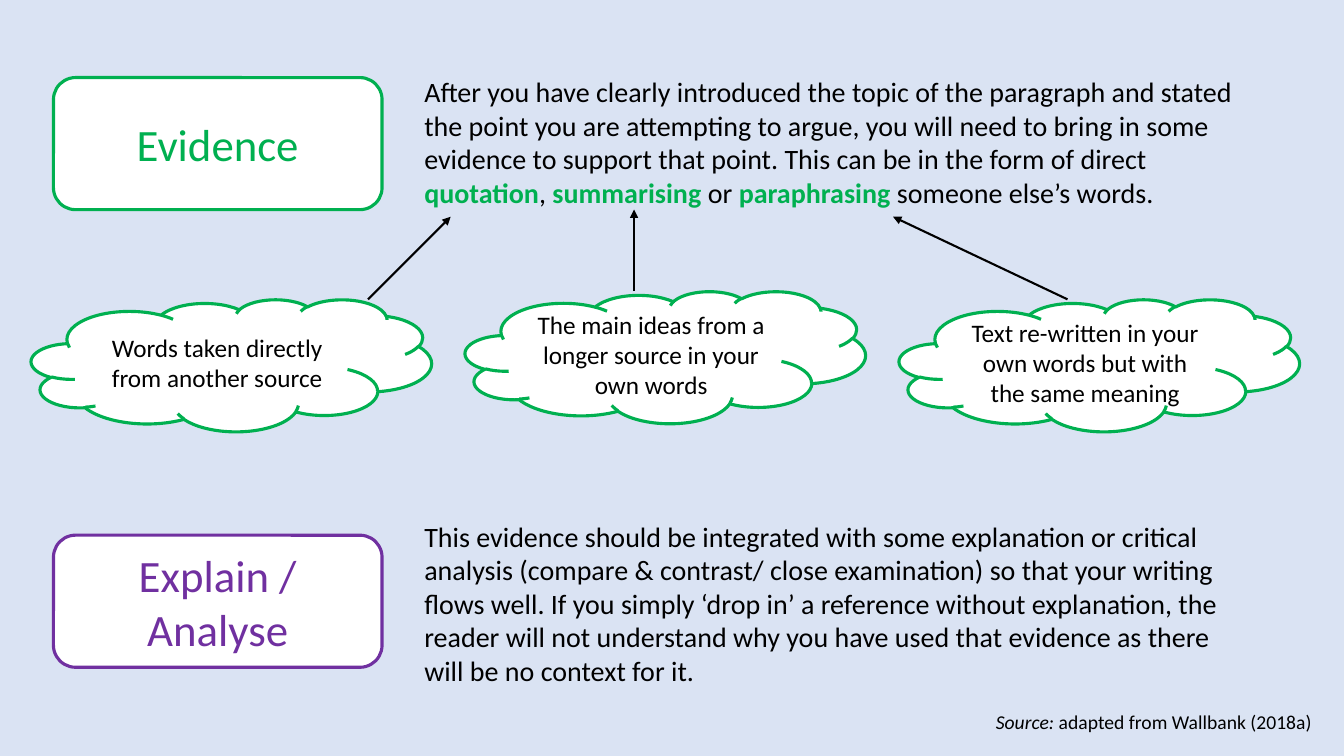
from dataclasses import dataclass

from lxml.etree import SubElement
from pptx import Presentation
from pptx.dml.color import RGBColor
from pptx.enum.shapes import MSO_CONNECTOR, MSO_SHAPE
from pptx.enum.text import MSO_ANCHOR, MSO_AUTO_SIZE, PP_ALIGN
from pptx.oxml.ns import qn
from pptx.slide import Slide
from pptx.text.text import TextFrame
from pptx.util import Inches, Pt

SLIDE_WIDTH = Inches(13.333)
SLIDE_HEIGHT = Inches(7.5)


@dataclass(frozen=True)
class Theme:
    """Colours, font, type sizes and line widths in points."""

    background: RGBColor = RGBColor(0xDA, 0xE3, 0xF3)
    panel: RGBColor = RGBColor(0xFF, 0xFF, 0xFF)
    ink: RGBColor = RGBColor(0x00, 0x00, 0x00)
    evidence: RGBColor = RGBColor(0x00, 0xB0, 0x50)
    explain: RGBColor = RGBColor(0x70, 0x30, 0xA0)
    font: str = "Calibri"
    heading_size: float = 32
    body_size: float = 20
    cloud_size: float = 18
    source_size: float = 14
    outline: float = 2.25
    arrow: float = 1.5


THEME = Theme()


@dataclass(frozen=True)
class Area:
    """A rectangle in percentages of the slide's width and height."""

    left: float
    top: float
    width: float
    height: float

    def lengths(self) -> tuple[int, int, int, int]:
        """Return left, top, width and height as slide lengths."""
        return across(self.left), down(self.top), across(self.width), down(self.height)


@dataclass(frozen=True)
class Words:
    """A run of text with its formatting."""

    text: str
    size: float = THEME.body_size
    color: RGBColor = THEME.ink
    bold: bool = False
    italic: bool = False


@dataclass(frozen=True)
class Panel:
    """An outlined shape holding centred words."""

    preset: MSO_SHAPE
    area: Area
    outline: RGBColor
    words: Words


@dataclass(frozen=True)
class Passage:
    """A left-aligned block of text."""

    area: Area
    runs: tuple[Words, ...]


@dataclass(frozen=True)
class Technique:
    """A cloud's words and top, and its arrow's ends."""

    text: str
    top: float
    arrow_start: float
    arrow_end: float
    arrow_tip: float


def across(percent: float) -> int:
    """Turn a percentage of the slide's width into a length."""
    return round(SLIDE_WIDTH * percent / 100)


def down(percent: float) -> int:
    """Turn a percentage of the slide's height into a length."""
    return round(SLIDE_HEIGHT * percent / 100)


def keyword(text: str) -> Words:
    """Return a highlighted term."""
    return Words(text, color=THEME.evidence, bold=True)


def heading(text: str, top: float, color: RGBColor) -> Panel:
    """Return a rounded section heading."""
    area = Area(HEADING_LEFT, top, HEADING_WIDTH, PANEL_HEIGHT)
    words = Words(text, THEME.heading_size, color)
    return Panel(MSO_SHAPE.ROUNDED_RECTANGLE, area, color, words)


def write(frame: TextFrame, runs: tuple[Words, ...], alignment: PP_ALIGN) -> None:
    """Fill a text frame with one paragraph of runs."""
    frame.word_wrap = True
    paragraph = frame.paragraphs[0]
    paragraph.alignment = alignment
    for words in runs:
        run = paragraph.add_run()
        run.text = words.text
        run.font.name = THEME.font
        run.font.size = Pt(words.size)
        run.font.color.rgb = words.color
        run.font.bold = words.bold
        run.font.italic = words.italic


def draw_panel(slide: Slide, panel: Panel) -> None:
    """Draw an outlined shape and its words."""
    shape = slide.shapes.add_shape(panel.preset, *panel.area.lengths())
    shape.shadow.inherit = False
    shape.fill.solid()
    shape.fill.fore_color.rgb = THEME.panel
    shape.line.color.rgb = panel.outline
    shape.line.width = Pt(THEME.outline)
    shape.text_frame.vertical_anchor = MSO_ANCHOR.MIDDLE
    write(shape.text_frame, (panel.words,), PP_ALIGN.CENTER)


def draw_passage(slide: Slide, passage: Passage) -> None:
    """Draw a block of text."""
    box = slide.shapes.add_textbox(*passage.area.lengths())
    write(box.text_frame, passage.runs, PP_ALIGN.LEFT)
    box.text_frame.auto_size = MSO_AUTO_SIZE.SHAPE_TO_FIT_TEXT


def draw_technique(slide: Slide, technique: Technique, column: int) -> None:
    """Draw a cloud in its column and the arrow rising from it."""
    left = CLOUD_LEFT + column * CLOUD_PITCH
    area = Area(left, technique.top, CLOUD_WIDTH, PANEL_HEIGHT)
    words = Words(technique.text, THEME.cloud_size)
    draw_panel(slide, Panel(MSO_SHAPE.CLOUD, area, THEME.evidence, words))
    arrow = slide.shapes.add_connector(
        MSO_CONNECTOR.STRAIGHT,
        across(technique.arrow_start),
        down(technique.top),
        across(technique.arrow_end),
        down(technique.arrow_tip),
    )
    arrow.line.color.rgb = THEME.ink
    arrow.line.width = Pt(THEME.arrow)
    SubElement(arrow.line._get_or_add_ln(), qn("a:tailEnd"), type="triangle")
    SubElement(arrow._element.spPr, qn("a:effectLst"))


HEADING_LEFT, HEADING_WIDTH = 3.98, 24.45
PASSAGE_LEFT = 30.83
PANEL_HEIGHT = 17.47
CLOUD_LEFT, CLOUD_WIDTH, CLOUD_PITCH = 2.33, 29.78, 32.29

HEADINGS = (
    heading("Evidence", 10.27, THEME.evidence),
    heading("Explain / Analyse", 70.8, THEME.explain),
)
TECHNIQUES = (
    Technique("Words taken directly from another source", 39.6, 27.38, 33.53, 28.67),
    Technique("The main ideas from a longer source in your own words", 38.53, 47.18, 47.18, 27.73),
    Technique("Text re-written in your own words but with the same meaning", 39.6, 79.43, 66.45, 28.67),
)
PASSAGES = (
    Passage(Area(PASSAGE_LEFT, 9.2, 61.73, 27.33), (
        Words("After you have clearly introduced the topic of the paragraph and stated the point you are "
              "attempting to argue, you will need to bring in some evidence to support that point. "
              "This can be in the form of direct "),
        keyword("quotation"), Words(", "), keyword("summarising"), Words(" or "),
        keyword("paraphrasing "), Words("someone else’s words."),
    )),
    Passage(Area(PASSAGE_LEFT, 68, 60.98, 35.87), (
        Words("This evidence should be integrated with some explanation or critical analysis (compare & "
              "contrast/ close examination) so that your writing flows well. If you simply ‘drop in’ a "
              "reference without explanation, the reader will not understand why you have used that "
              "evidence as there will be no context for it."),
    )),
    Passage(Area(73.35, 92.53, 26.03, 5.33), (
        Words("Source: ", THEME.source_size, italic=True),
        Words("adapted from Wallbank (2018a)", THEME.source_size),
        Words(" ", THEME.cloud_size),
    )),
)


def main() -> None:
    """Build and save the slide."""
    presentation = Presentation()
    presentation.slide_width, presentation.slide_height = SLIDE_WIDTH, SLIDE_HEIGHT
    slide = presentation.slides.add_slide(presentation.slide_layouts.get_by_name("Blank"))
    slide.background.fill.solid()
    slide.background.fill.fore_color.rgb = THEME.background
    for panel in HEADINGS:
        draw_panel(slide, panel)
    for column, technique in enumerate(TECHNIQUES):
        draw_technique(slide, technique, column)
    for passage in PASSAGES:
        draw_passage(slide, passage)
    presentation.save("out.pptx")


if __name__ == "__main__":
    main()
